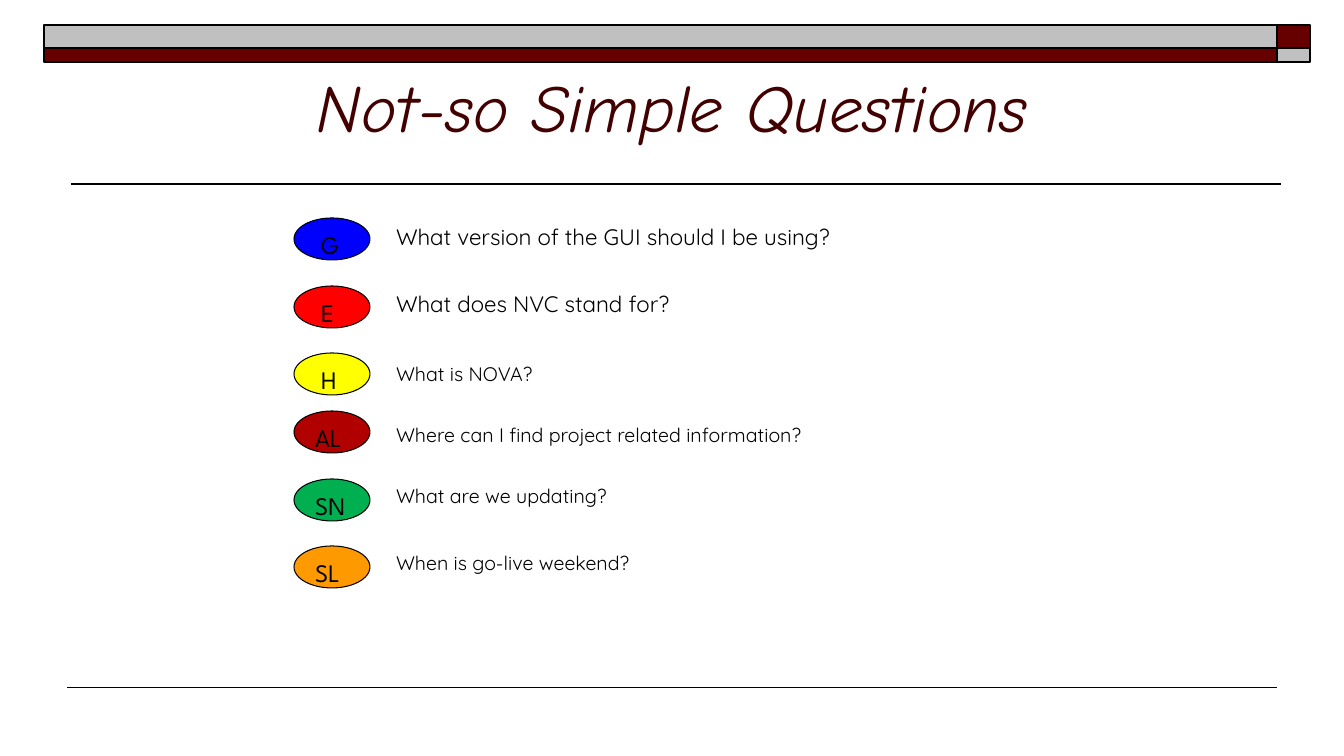
from dataclasses import dataclass

from lxml.etree import SubElement
from pptx import Presentation
from pptx.dml.color import RGBColor
from pptx.enum.shapes import MSO_CONNECTOR, MSO_SHAPE
from pptx.enum.text import MSO_ANCHOR, MSO_AUTO_SIZE, PP_ALIGN
from pptx.oxml.ns import qn
from pptx.util import Emu, Pt


@dataclass(frozen=True)
class Theme:
    ink: str = "000000"
    title: str = "420000"
    maroon: str = "660000"
    silver: str = "C0C0C0"
    title_font: str = "Comic Neue"
    badge_font: str = "League Spartan"
    question_font: str = "Quicksand"
    title_size: int = 48
    badge_size: int = 18
    large_size: int = 16
    small_size: int = 14


theme = Theme()
EMU_PER_PX = 914400 / 100.8


def px(*lengths):
    return [Emu(round(length * EMU_PER_PX)) for length in lengths]


def write(shape, text, *, font, size, color, italic=False, align=PP_ALIGN.LEFT,
          anchor=MSO_ANCHOR.TOP, fit=MSO_AUTO_SIZE.NONE, indent=10):
    frame = shape.text_frame
    frame.word_wrap = True
    frame.auto_size = fit
    frame.vertical_anchor = anchor
    frame.margin_left, frame.margin_right, frame.margin_top, frame.margin_bottom = px(indent, 10, 5, 5)
    paragraph = frame.paragraphs[0]
    paragraph.text = text
    paragraph.alignment = align
    paragraph.font.name = font
    paragraph.font.size = Pt(size)
    paragraph.font.italic = italic
    paragraph.font.color.rgb = RGBColor.from_string(color)


deck = Presentation()
deck.slide_width, deck.slide_height = px(1344, 756)
slide = deck.slides.add_slide(deck.slide_layouts[5])
shapes = slide.shapes

title = shapes.title
title.left, title.top, title.width, title.height = px(219, 25, 907, 126)
write(title, "Not-so Simple Questions", font=theme.title_font, size=theme.title_size,
      color=theme.title, italic=True, align=PP_ALIGN.CENTER, anchor=MSO_ANCHOR.BOTTOM)

for left, right, y, weight in [(71, 1281, 184, 1), (67, 1277, 688, 0.75)]:
    rule = shapes.add_connector(MSO_CONNECTOR.STRAIGHT, *px(left, y, right, y))
    rule.line.color.rgb = RGBColor.from_string(theme.ink)
    rule.line.width = Pt(weight)
    SubElement(rule._element.spPr, qn("a:effectLst"))

header_bars = [
    (1277, 25, 33, 23, theme.maroon),
    (44, 25, 1233, 23, theme.silver),
    (44, 48, 1233, 14, theme.maroon),
    (1277, 48, 33, 14, theme.silver),
]
for left, top, width, height, color in header_bars:
    bar = shapes.add_shape(MSO_SHAPE.RECTANGLE, *px(left, top, width, height))
    bar.shadow.inherit = False
    bar.fill.solid()
    bar.fill.fore_color.rgb = RGBColor.from_string(color)
    bar.line.color.rgb = RGBColor.from_string(theme.ink)
    bar.line.width = Pt(1)

questions = [
    ("G", "0000FF", 218, 218, theme.large_size, "What version of the GUI should I be using?"),
    ("E", "FF0000", 286, 285, theme.large_size, "What does NVC stand for?"),
    ("H", "FFFF00", 353, 357, theme.small_size, "What is NOVA?"),
    ("AL", "B10000", 411, 418, theme.small_size, "Where can I find project related information?"),
    ("SN", "00B050", 479, 479, theme.small_size, "What are we updating?"),
    ("SL", "FF9900", 546, 546, theme.small_size, "When is go-live weekend?"),
]
for category, color, badge_top, question_top, size, wording in questions:
    badge = shapes.add_shape(MSO_SHAPE.OVAL, *px(294, badge_top, 76, 42))
    badge.shadow.inherit = False
    badge.fill.solid()
    badge.fill.fore_color.rgb = RGBColor.from_string(color)
    badge.line.color.rgb = RGBColor.from_string(theme.ink)
    badge.line.width = Pt(0.75)
    write(badge, category, font=theme.badge_font, size=theme.badge_size, color=theme.ink,
          indent=16 if len(category) == 1 else 10)

    question = shapes.add_textbox(*px(386, question_top, 650, 37 if size == theme.large_size else 34))
    write(question, wording, font=theme.question_font, size=size, color=theme.ink,
          fit=MSO_AUTO_SIZE.SHAPE_TO_FIT_TEXT)

deck.save("out.pptx")
